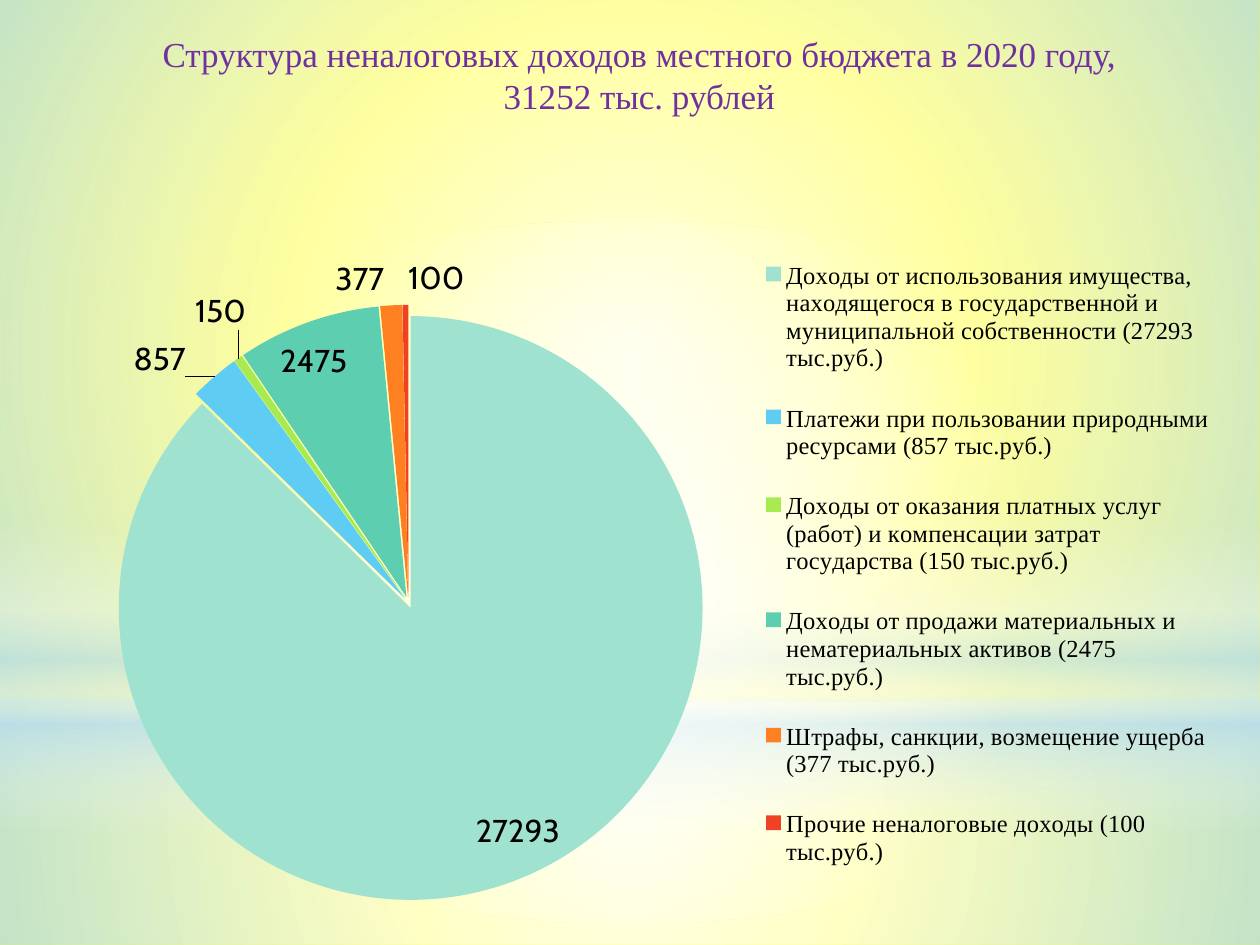
"""Builds a slide with a pie chart of non-tax revenue of a local budget."""
import pptx
import pptx.chart.data
import pptx.dml.color
import pptx.enum.chart
import pptx.enum.shapes
import pptx.enum.text
import pptx.oxml
import pptx.oxml.ns
import pptx.util

Cm, Pt = pptx.util.Cm, pptx.util.Pt
qn = pptx.oxml.ns.qn
SHAPES = pptx.enum.shapes.MSO_SHAPE
CHARTS = pptx.enum.chart

COLOURS = {"yellow": "FFFF00", "white": "FFFFFF", "sky": "B4DCFA",
           "title": "7030A0", "text": "000000"}
TITLE = "Структура неналоговых доходов местного бюджета в 2020 году,\v31252 тыс. рублей"
REVENUES = [
    ("Доходы от использования имущества, находящегося в государственной и "
     "муниципальной собственности", 27293, "9EE2CF"),
    ("Платежи при пользовании природными ресурсами", 857, "5ECCF3"),
    ("Доходы от оказания платных услуг (работ) и компенсации затрат государства", 150, "A7EA52"),
    ("Доходы от продажи материальных и нематериальных активов", 2475, "5DCEAF"),
    ("Штрафы, санкции, возмещение ущерба", 377, "FF8021"),
    ("Прочие неналоговые доходы", 100, "F14124"),
]
LABEL_SHIFTS = {1: {"x": -0.02, "y": 0.01}, 2: {"x": 0.01, "y": -0.03}}
PLOT_AREA = {"x": 0.016, "y": 0.154, "w": 0.595, "h": 0.819}
LEGEND_AREA = {"x": 0.61, "y": 0.05, "w": 0.38, "h": 0.92}

CENTRED = ('<a:path path="circle"><a:fillToRect l="50000" t="50000" r="50000" b="50000"/>'
           '</a:path>')
DOWNWARD = '<a:lin ang="5400000" scaled="0"/>'
GLOWS = [
    (SHAPES.RECTANGLE, (0, 14.17, 25.4, 4.88), CENTRED,
     [(0, "white", 91), (37, "white", 76), (100, "sky", 79)]),
    (SHAPES.RECTANGLE, (0, 0, 25.4, 14.17), CENTRED,
     [(0, "white", 89), (48, "white", 62), (100, "sky", 79)]),
    (SHAPES.RECTANGLE, (0, 10.46, 25.4, 6.35), DOWNWARD,
     [(0, "white", 0), (29, "white", 30), (45, "sky", 40), (55, "white", 26),
      (65, "sky", 60), (100, "white", 0)]),
    (SHAPES.OVAL, (0, 4.45, 25.4, 14.17), CENTRED,
     [(0, "white", 100), (56, "white", 0)]),
]


def rgb(value):
    return pptx.dml.color.RGBColor.from_string(value)


def add_glow(slide, outline, box, direction, stops):
    glow = slide.shapes.add_shape(outline, *map(Cm, box))
    glow.shadow.inherit = False
    glow.line.fill.background()
    glow.fill.background()
    stop_xml = "".join(
        f'<a:gs pos="{at * 1000}"><a:srgbClr val="{COLOURS[name]}">'
        f'<a:alpha val="{alpha * 1000}"/></a:srgbClr></a:gs>'
        for at, name, alpha in stops)
    gradient = pptx.oxml.parse_xml(
        f'<a:gradFill {pptx.oxml.ns.nsdecls("a")} rotWithShape="1">'
        f'<a:gsLst>{stop_xml}</a:gsLst>{direction}</a:gradFill>')
    properties = glow._element.spPr
    properties.replace(properties.find(qn("a:noFill")), gradient)


def place(parent, after, area, edges=""):
    for old in parent.findall(qn("c:layout")):
        parent.remove(old)
    values = "".join(f'<c:{key} val="{value}"/>' for key, value in area.items())
    layout = pptx.oxml.parse_xml(
        f'<c:layout {pptx.oxml.ns.nsdecls("c")}><c:manualLayout>{edges}{values}'
        '</c:manualLayout></c:layout>')
    if after is None:
        parent.insert(0, layout)
    else:
        after.addnext(layout)


def add_revenue_pie(slide):
    revenue = pptx.chart.data.CategoryChartData()
    revenue.categories = [f"{name} ({value} тыс.руб.)" for name, value, _ in REVENUES]
    revenue.add_series("Series 1", [value for _, value, _ in REVENUES])
    chart = slide.shapes.add_chart(CHARTS.XL_CHART_TYPE.PIE, Cm(0.71), Cm(3.89),
                                   Cm(24), Cm(14.66), revenue).chart
    chart.has_title = False
    chart.font.name, chart.font.size = "Cabin", Pt(18)
    chart.font.color.rgb = rgb(COLOURS["text"])
    chart.plots[0].vary_by_categories = True

    edges = '<c:xMode val="edge"/><c:yMode val="edge"/>'
    place(chart._chartSpace.chart.plotArea, None, PLOT_AREA,
          '<c:layoutTarget val="inner"/>' + edges)
    chart.has_legend = True
    legend = chart.legend
    legend.position = CHARTS.XL_LEGEND_POSITION.RIGHT
    legend.include_in_layout = False
    legend.font.name, legend.font.size = "Times New Roman", Pt(14)
    legend.font.color.rgb = rgb(COLOURS["text"])
    place(legend._element, legend._element.find(qn("c:legendPos")), LEGEND_AREA, edges)

    series = chart.plots[0].series[0]
    for index, (_, _, colour) in enumerate(REVENUES):
        fill = series.points[index].format.fill
        fill.solid()
        fill.fore_color.rgb = rgb(colour)
    series._element.find(qn("c:dPt")).addprevious(
        pptx.oxml.parse_xml(f'<c:explosion {pptx.oxml.ns.nsdecls("c")} val="2"/>'))

    labels = series.data_labels
    labels.show_value = True
    labels.position = CHARTS.XL_LABEL_POSITION.BEST_FIT
    for index, shift in LABEL_SHIFTS.items():
        label = series.points[index].data_label
        label.position = CHARTS.XL_LABEL_POSITION.BEST_FIT
        label.font.name, label.font.size = "Cabin", Pt(18)
    for label in labels._element.findall(qn("c:dLbl")):
        number = label.find(qn("c:idx"))
        place(label, number, LABEL_SHIFTS[int(number.get("val"))])


def add_title(slide):
    frame = slide.shapes.add_textbox(Cm(1.09), Cm(0.53), Cm(23.6), Cm(1.96)).text_frame
    frame.word_wrap = True
    heading = frame.paragraphs[0]
    heading.text = TITLE
    heading.alignment = pptx.enum.text.PP_ALIGN.CENTER
    heading.font.name, heading.font.size = "Times New Roman", Pt(20)
    heading.font.color.rgb = rgb(COLOURS["title"])


def main():
    deck = pptx.Presentation()
    deck.slide_width, deck.slide_height = Cm(25.4), Cm(19.05)
    slide = deck.slides.add_slide(deck.slide_layouts[6])
    slide.background.fill.solid()
    slide.background.fill.fore_color.rgb = rgb(COLOURS["yellow"])
    for glow in GLOWS:
        add_glow(slide, *glow)
    add_revenue_pie(slide)
    add_title(slide)
    deck.save("out.pptx")


if __name__ == "__main__":
    main()
